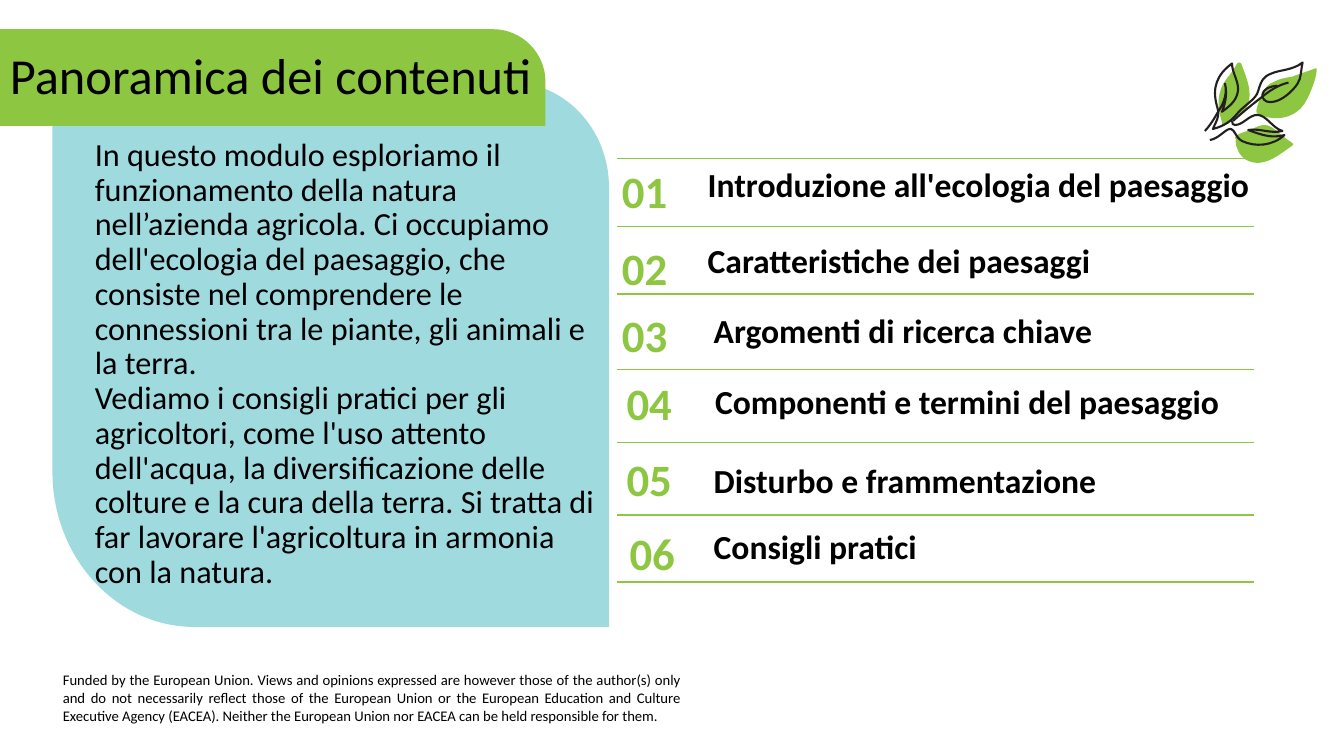
from pptx import Presentation
from pptx.dml.color import RGBColor
from pptx.enum.shapes import MSO_CONNECTOR
from pptx.enum.text import MSO_ANCHOR, PP_ALIGN
from pptx.oxml.ns import qn
from pptx.util import Pt

LEFT, CENTER, JUSTIFY = PP_ALIGN.LEFT, PP_ALIGN.CENTER, PP_ALIGN.JUSTIFY
TOP, MIDDLE = MSO_ANCHOR.TOP, MSO_ANCHOR.MIDDLE
STRAIGHT = MSO_CONNECTOR.STRAIGHT
COLORS = {"green": "8DC641", "aqua": "9FDADF", "ink": "231F20", "black": "000000"}

# The page is a fine grid of square cells; every length below counts cells
COLUMNS, ROWS, CELL = 1333, 750, 9144

deck = Presentation()
deck.slide_width, deck.slide_height = COLUMNS * CELL, ROWS * CELL
page = deck.slides.add_slide(deck.slide_layouts[6])


def add_outline(contours, fill=None):
    """Draw a filled outline, or open ink strokes when there is no fill.

    A contour is a start point and its segments: a segment of two numbers
    is a straight line, one of six a Bezier curve.
    """
    builder = page.shapes.build_freeform(*contours[0][0], scale=CELL)
    for index, (start, segments) in enumerate(contours):
        if index:
            builder.move_to(*start)
        points = [segment[i:i + 2] for segment in segments for i in range(0, len(segment), 2)]
        builder.add_line_segments(points, close=False)
    shape = builder.convert_to_shape()
    # Join each three points of a curve into one Bezier segment
    outline = shape._element.find(".//" + qn("a:path"))
    lines = iter(outline.findall(qn("a:lnTo")))
    for _, segments in contours:
        for segment in segments:
            line = next(lines)
            if len(segment) == 6:
                line.tag = qn("a:cubicBezTo")
                for _ in range(2):
                    extra = next(lines)
                    line.append(extra[0])
                    outline.remove(extra)
    shape.shadow.inherit = False
    if fill:
        outline.append(outline.makeelement(qn("a:close"), {}))
        shape.fill.solid()
        shape.fill.fore_color.rgb = RGBColor.from_string(COLORS[fill])
        shape.line.fill.background()
    else:
        shape.fill.background()
        shape.line.color.rgb = RGBColor.from_string(COLORS["ink"])
        shape.line.width = Pt(1.5)


def add_text(area, paragraphs, size, color="black", bold=False, align=LEFT,
             anchor=MIDDLE, spacing=0.9, inset=10):
    box = page.shapes.add_textbox(*(length * CELL for length in area))
    frame = box.text_frame
    frame.word_wrap = True
    frame.vertical_anchor = anchor
    frame.margin_left = inset * CELL
    for index, text in enumerate(paragraphs):
        para = frame.add_paragraph() if index else frame.paragraphs[0]
        para.text = text
        para.alignment = align
        para.line_spacing = spacing
        para.font.name = "Calibri"
        para.font.size = Pt(size)
        para.font.bold = bold
        para.font.color.rgb = RGBColor.from_string(COLORS[color])


# Panel and title bar
panel = ((604, 622), [(193, 622), (115, 622, 52, 553, 52, 468), (52, 82), (508, 82),
                      (561, 82, 604, 129, 604, 186)])
title_bar = ((0, 29), [(489, 29), (518, 29, 541, 53, 541, 81), (541, 125), (0, 125)])
add_outline([panel], "aqua")
add_outline([title_bar], "green")
add_text((0, 38, 542, 79), ["Panoramica dei contenuti"], 36)

# Introduction
add_text((59, 132.5, 542, 436), [
    "In questo modulo esploriamo il funzionamento della natura nell’azienda agricola. "
    "Ci occupiamo dell'ecologia del paesaggio, che consiste nel comprendere le "
    "connessioni tra le piante, gli animali e la terra.",
    "Vediamo i consigli pratici per gli agricoltori, come l'uso attento dell'acqua, "
    "la diversificazione delle colture e la cura della terra. Si tratta di far lavorare "
    "l'agricoltura in armonia con la natura.",
], 23, anchor=TOP, inset=35)

# Rules between the contents
for rule_y in (157.5, 224.5, 291.5, 366.5, 439, 511, 577.5):
    rule = page.shapes.add_connector(STRAIGHT, 1244 * CELL, int(rule_y * CELL),
                                     612 * CELL, int(rule_y * CELL))
    rule.line.color.rgb = RGBColor.from_string(COLORS["green"])
    rule.line.width = Pt(1)
    rule._element.spPr.append(rule._element.spPr.makeelement(qn("a:effectLst"), {}))

# Contents: number left and top; topic left, top and width; topic
contents = [
    (601, 155, 692, 147.5, 599, "Introduzione all'ecologia del paesaggio"),
    (601, 231, 692, 222.5, 488, "Caratteristiche dei paesaggi"),
    (601, 298, 698, 292.5, 488, "Argomenti di ricerca chiave"),
    (605.5, 365.5, 699.5, 362.5, 566, "Componenti e termini del paesaggio"),
    (605.5, 441, 698, 441, 488, "Disturbo e frammentazione"),
    (608.5, 514, 698, 507, 488, "Consigli pratici"),
]
for number, (number_x, number_y, topic_x, topic_y, width, topic) in enumerate(contents, 1):
    add_text((int(number_x * 2) / 2, number_y, 77, 75), [f"{number:02}"], 32, "green", True, CENTER)
    add_text((topic_x, topic_y, width, 75), [topic], 24, bold=True)

# Funding note
add_text((52.5, 661, 633, 66), [
    "Funded by the European Union. Views and opinions expressed are however those of the "
    "author(s) only and do not necessarily reflect those of the European Union or the "
    "European Education and Culture Executive Agency (EACEA). Neither the European Union "
    "nor EACEA can be held responsible for them.",
], 10.5, align=JUSTIFY, anchor=TOP, spacing=1)

# Green leaves
leaves = [
    ((1217, 123), [(1227, 118, 1238, 110, 1239, 99), (1241, 87, 1235, 74, 1231, 63),
                   (1230, 61, 1228, 62, 1227, 63), (1224, 69, 1220, 74, 1216, 79),
                   (1207, 91, 1207, 106, 1212, 121), (1211, 123, 1212, 125, 1217, 123)]),
    ((1286, 111), [(1292, 107, 1296, 100, 1299, 93), (1302, 86, 1305, 78, 1306, 70),
                   (1307, 68, 1305, 67, 1304, 68), (1297, 71, 1289, 73, 1282, 76),
                   (1276, 77, 1269, 78, 1264, 81), (1258, 83, 1255, 87, 1252, 92),
                   (1250, 98, 1247, 104, 1246, 110), (1246, 112, 1247, 113, 1248, 113),
                   (1260, 119, 1275, 119, 1286, 111)]),
    ((1281, 145), [(1283, 144, 1283, 143, 1282, 142), (1276, 138, 1271, 134, 1266, 130),
                   (1263, 127, 1259, 124, 1254, 124), (1250, 124, 1246, 126, 1242, 128),
                   (1239, 129, 1235, 131, 1231, 132), (1224, 135, 1224, 137, 1226, 138),
                   (1225, 141, 1226, 145, 1227, 147), (1229, 153, 1233, 158, 1239, 160),
                   (1255, 166, 1269, 153, 1281, 145)]),
]
for leaf in leaves:
    add_outline([leaf], "green")

# Ink strokes over the leaves
add_outline([
    ((1207, 105), [(1202, 87, 1207, 74, 1222, 63), (1222, 72, 1228, 79, 1228, 89),
                   (1227, 98, 1223, 103, 1212, 111), (1214, 106, 1218, 95, 1215, 83),
                   (1218, 95, 1212, 105, 1207, 113), (1203, 120, 1199, 126, 1195, 130)]),
    ((1207, 105), [(1211, 116, 1205, 122, 1203, 128), (1215, 125, 1222, 119, 1226, 114),
                   (1234, 104, 1246, 99, 1248, 90), (1251, 80, 1253, 76, 1261, 73),
                   (1270, 69, 1282, 70, 1292, 62), (1290, 70, 1291, 77, 1287, 83),
                   (1282, 91, 1271, 100, 1263, 101), (1258, 102, 1254, 101, 1252, 96)]),
    ((1278, 82), [(1268, 84, 1258, 91, 1252, 96), (1243, 103, 1234, 110, 1223, 120)]),
    ((1252, 95), [(1253, 87, 1260, 86, 1267, 85)]),
    ((1200, 139), [(1210, 137, 1216, 127, 1221, 128), (1225, 129, 1225, 136, 1232, 140),
                   (1245, 146, 1262, 145, 1274, 134), (1262, 137, 1254, 135, 1238, 129),
                   (1250, 127, 1260, 133, 1272, 130), (1262, 127, 1256, 114, 1247, 114),
                   (1239, 114, 1233, 124, 1225, 124), (1223, 124, 1222, 123, 1222, 120)]),
])

deck.save("out.pptx")
